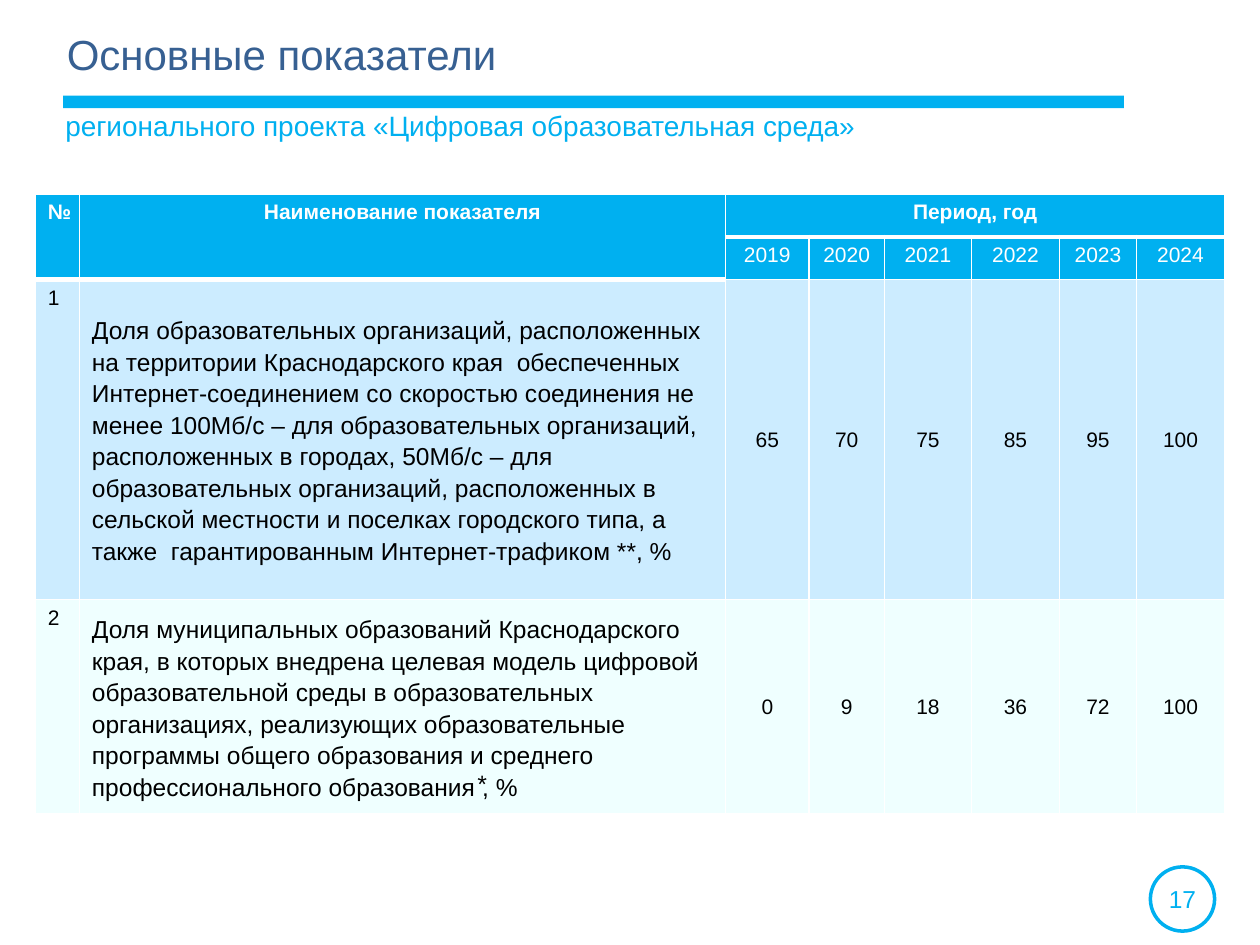
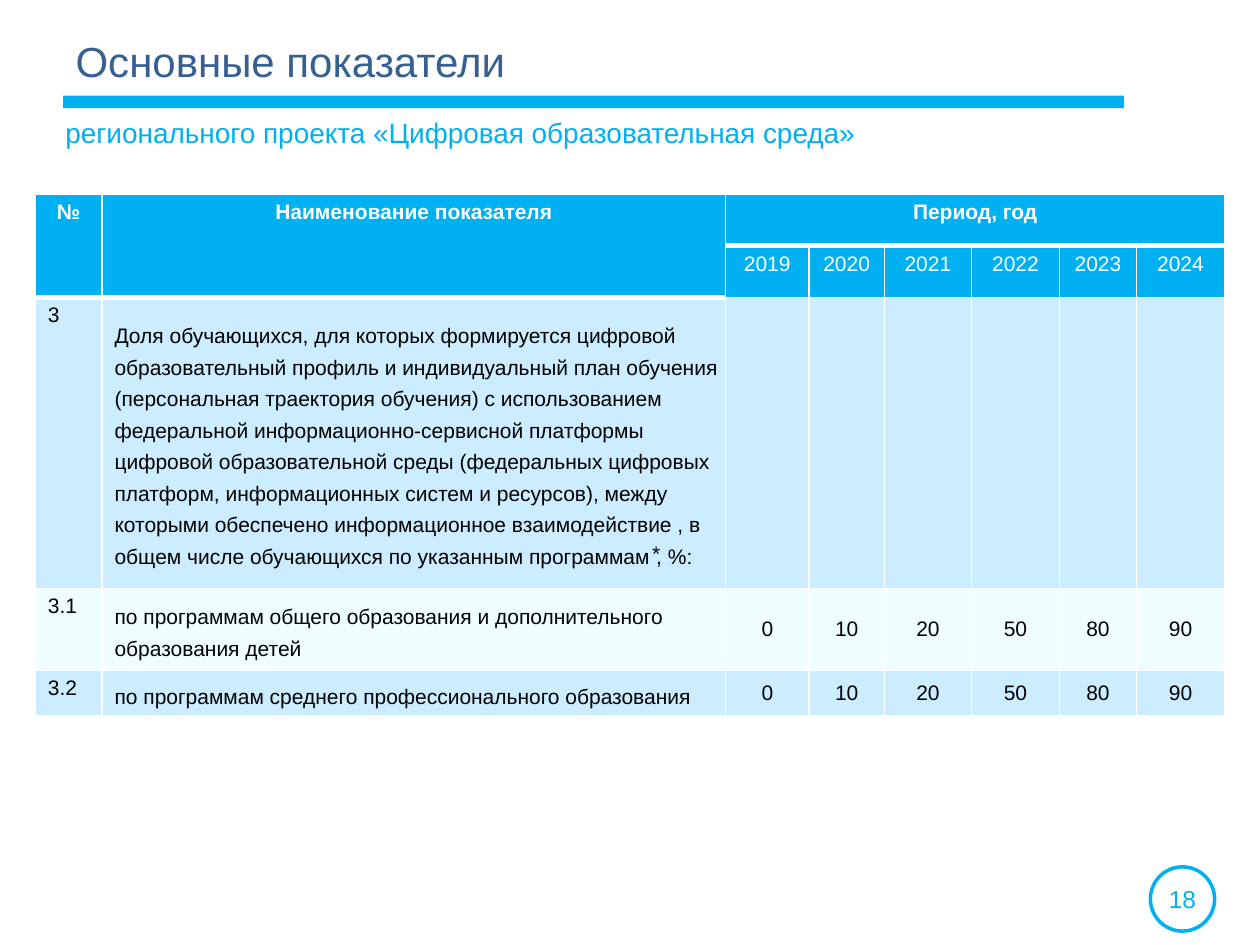
from lxml.etree import SubElement
from pptx import Presentation
from pptx.dml.color import RGBColor
from pptx.enum.shapes import MSO_SHAPE
from pptx.enum.text import MSO_ANCHOR, MSO_AUTO_SIZE, PP_ALIGN
from pptx.oxml.ns import qn
from pptx.util import Inches, Pt

# Shared style
SKY = RGBColor(0x00, 0xB0, 0xF0)
NAVY = RGBColor(0x37, 0x60, 0x92)
WHITE = RGBColor(0xFF, 0xFF, 0xFF)
BLACK = RGBColor(0x00, 0x00, 0x00)
BANDS = RGBColor(0xCC, 0xEC, 0xFF), RGBColor(0xEF, 0xFF, 0xFF)
FONT = "Arial"

# Slide grid: 100 columns by 75 rows
COLS, ROWS = 100, 75
WIDE, HIGH = Inches(10), Inches(7.5)

# Shared wording and table columns
TITLE = "Основные показатели"
TOPIC = "регионального проекта «Цифровая образовательная среда»"
YEARS = range(2019, 2025)
YEAR_COLS = [6.6, 6, 6.9, 7, 6.1, 7]
TABLE_W = 94.4


def across(n):
    return round(WIDE * n / COLS)


def down(n):
    return round(HIGH * n / ROWS)


class Deck:
    def __init__(self):
        self.prs = Presentation()
        self.prs.slide_width, self.prs.slide_height = WIDE, HIGH
        self.slide = None

    def page(self, number):
        """Start a slide with its band and numbered ring."""
        self.slide = self.prs.slides.add_slide(self.prs.slide_layouts[5])
        band = self.shape(MSO_SHAPE.RECTANGLE, 5, 7.6, 84.2, 1)
        band.fill.solid()
        band.fill.fore_color.rgb = SKY
        band.line.fill.background()
        ring = self.shape(MSO_SHAPE.OVAL, 91.3, 68.8, 5.1, 5.1)
        ring.fill.background()
        ring.line.color.rgb = SKY
        ring.line.width = Pt(2)
        frame = ring.text_frame
        frame.margin_left = frame.margin_right = 0
        frame.margin_top = frame.margin_bottom = 0
        frame.vertical_anchor = MSO_ANCHOR.MIDDLE
        frame.word_wrap = False
        self.label(frame, str(number), 14, SKY, PP_ALIGN.CENTER)

    def shape(self, kind, x, y, w, h):
        item = self.slide.shapes.add_shape(
            kind, across(x), down(y), across(w), down(h))
        item.shadow.inherit = False
        return item

    def label(self, frame, text, size, color, align=PP_ALIGN.LEFT, bold=False):
        par = frame.paragraphs[0]
        par.text = text
        par.alignment = align
        font = par.font
        font.name, font.size, font.bold = FONT, Pt(size), bold
        font.color.rgb = color
        return par

    def title(self, text, x, y):
        box = self.slide.shapes.title
        box.left, box.top = across(x), down(y)
        box.width, box.height = across(77.9), down(6.4)
        frame = box.text_frame
        frame.auto_size = MSO_AUTO_SIZE.NONE
        frame.vertical_anchor = MSO_ANCHOR.TOP
        self.label(frame, text, 24, NAVY)

    def topic(self, text, y):
        box = self.slide.shapes.add_textbox(
            across(4.2), down(y), across(85.6), down(4.9))
        box.text_frame.word_wrap = True
        self.label(box.text_frame, text, 16, SKY)

    def cell(self, cell, text, fill, color=BLACK, size=12,
             align=PP_ALIGN.CENTER, bold=False, under=1):
        """Fill one cell; under is the weight of its lower border."""
        props = cell._tc.get_or_add_tcPr()
        for side, weight in zip("LRTB", (1, 1, 1, under)):
            line = SubElement(props, qn(f"a:ln{side}"), w=str(Pt(weight)))
            paint = SubElement(line, qn("a:solidFill"))
            SubElement(paint, qn("a:srgbClr"), val=str(WHITE))
        cell.fill.solid()
        cell.fill.fore_color.rgb = fill
        return self.label(cell.text_frame, text, size, color, align, bold)

    def name(self, cell, text, fill, size):
        """Indicator name with fixed line spacing and a small indent."""
        par = self.cell(cell, text, fill, size=size, align=PP_ALIGN.LEFT)
        par.line_spacing = Pt(18)
        par._p.get_or_add_pPr().set("marL", str(Inches(0.08)))
        cell.margin_left = cell.margin_right = Inches(0.02)
        cell.margin_top = cell.margin_bottom = 0
        cell.vertical_anchor = MSO_ANCHOR.MIDDLE

    def table(self, first, heights, goals, size):
        frame = self.slide.shapes.add_table(
            len(heights), 2 + len(YEARS), across(2.8), down(15.4),
            across(TABLE_W), down(sum(heights)))
        table = frame.table
        table.first_row = table.horz_banding = False
        widths = [first, TABLE_W - first - sum(YEAR_COLS), *YEAR_COLS]
        for col, width in zip(table.columns, widths):
            col.width = across(width)
        for row, height in zip(table.rows, heights):
            row.height = down(height)

        # Two header rows
        heads = ["№", "Наименование показателя", "Период, год"]
        tops = heads + [""] * (len(YEARS) - 1)
        lows = ["", "", *map(str, YEARS)]
        for c, (top, low) in enumerate(zip(tops, lows)):
            self.cell(table.cell(0, c), top, SKY, WHITE, bold=True, under=3)
            self.cell(table.cell(1, c), low, SKY, WHITE,
                      under=3 if c < 2 else 1)
        for c in range(2):
            table.cell(0, c).merge(table.cell(1, c))
        table.cell(0, 2).merge(table.cell(0, 1 + len(YEARS)))

        # Indicator rows in alternating bands
        for r, (mark, name, values) in enumerate(goals):
            fill = BANDS[r % 2]
            cells = list(table.rows[r + 2].cells)
            self.cell(cells[0], mark, fill, align=PP_ALIGN.LEFT)
            self.name(cells[1], name, fill, size)
            for cell, value in zip(cells[2:], values):
                self.cell(cell, str(value), fill)
                cell.vertical_anchor = MSO_ANCHOR.MIDDLE


def main():
    deck = Deck()

    # Indicators 1 and 2
    deck.page(17)
    deck.topic(TOPIC, 8.1)
    deck.title(TITLE, 4.3, 1.8)
    deck.table(3.5, [3.4, 3.4, 25.4, 17], [
        ("1", "Доля образовательных организаций, расположенных на территории "
              "Краснодарского края  обеспеченных Интернет-соединением со "
              "скоростью соединения не менее 100Мб/c – для образовательных "
              "организаций, расположенных в городах, 50Мб/c – для "
              "образовательных организаций, расположенных в сельской "
              "местности и поселках городского типа, а также  "
              "гарантированным Интернет-трафиком **, %",
         [65, 70, 75, 85, 95, 100]),
        ("2", "Доля муниципальных образований Краснодарского края, в которых "
              "внедрена целевая модель цифровой образовательной среды в "
              "образовательных организациях, реализующих образовательные "
              "программы общего образования и среднего профессионального "
              "образования ⃰, %",
         [0, 9, 18, 36, 72, 100]),
    ], 14)

    # Indicator 3 and its parts
    deck.page(18)
    deck.topic(TOPIC, 8.7)
    deck.title(TITLE, 5, 2.3)
    growth = [0, 10, 20, 50, 80, 90]
    deck.table(5.3, [4.1, 4.1, 23.1, 6.5, 3.6], [
        ("3", "Доля обучающихся, для которых формируется цифровой "
              "образовательный профиль и индивидуальный план обучения "
              "(персональная траектория обучения) с использованием "
              "федеральной информационно-сервисной платформы цифровой "
              "образовательной среды (федеральных цифровых платформ, "
              "информационных систем и ресурсов), между которыми обеспечено "
              "информационное взаимодействие , в общем числе обучающихся по "
              "указанным программам ⃰, %:",
         [""] * len(YEARS)),
        ("3.1", "по программам общего образования и дополнительного "
                "образования детей", growth),
        ("3.2", "по программам среднего профессионального образования",
         growth),
    ], 12)

    deck.prs.save("out.pptx")


if __name__ == "__main__":
    main()
